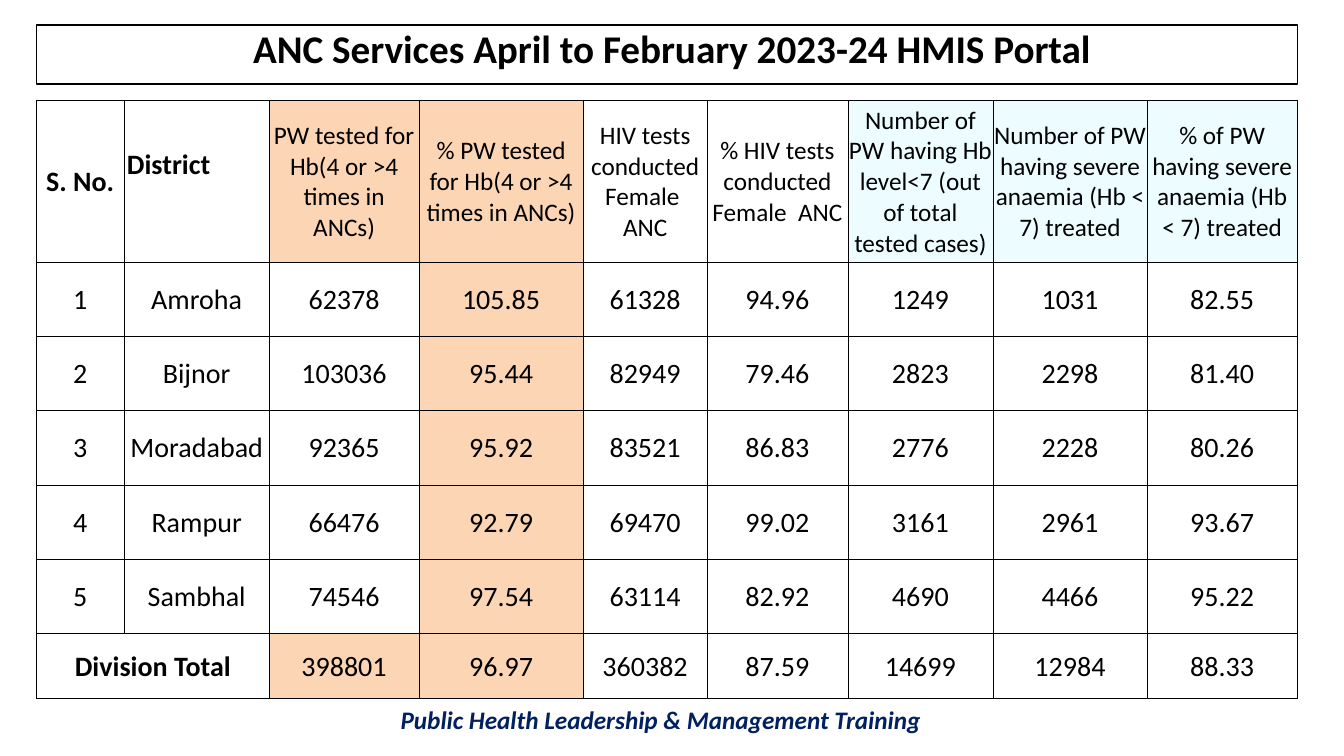
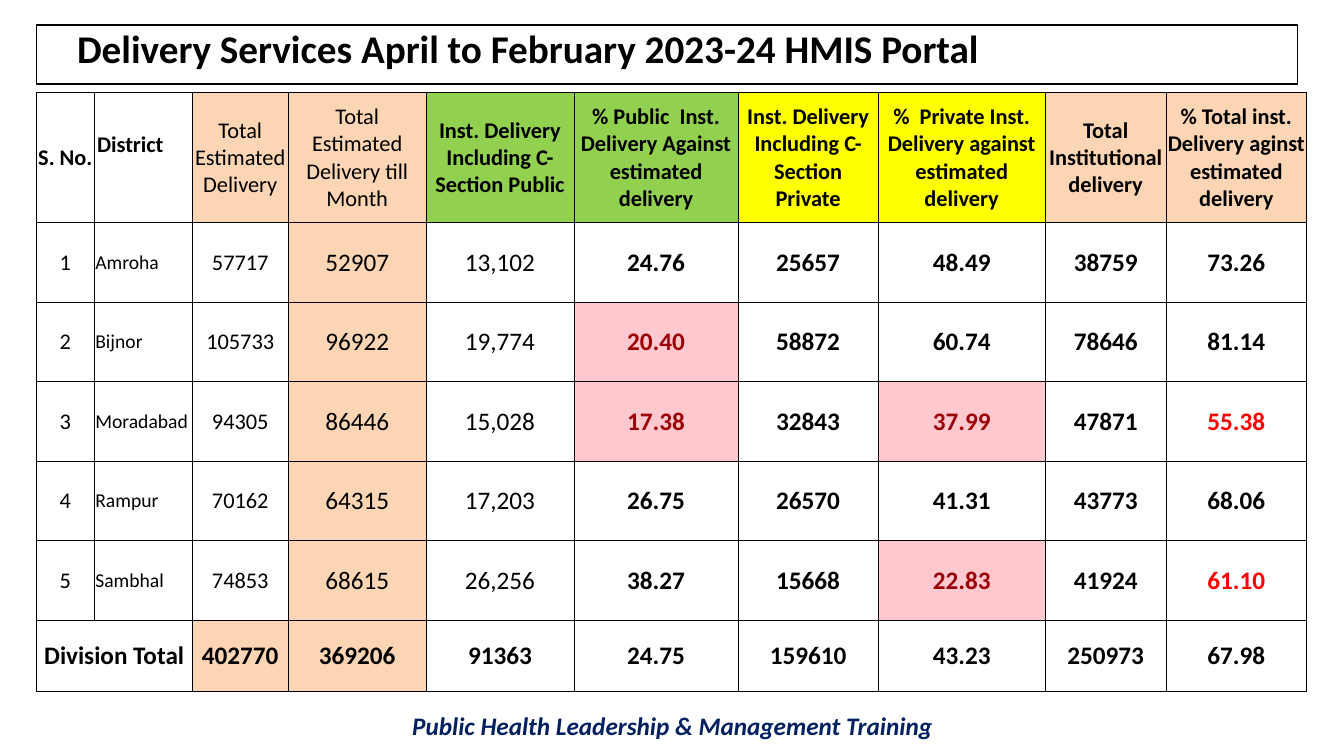
"""Build two district tables of maternal health services."""
from dataclasses import dataclass
from typing import Optional

from lxml.etree import SubElement
from pptx import Presentation
from pptx.dml.color import RGBColor
from pptx.enum.shapes import MSO_SHAPE
from pptx.enum.text import MSO_ANCHOR, PP_ALIGN
from pptx.oxml import parse_xml
from pptx.oxml.ns import nsdecls, qn
from pptx.util import Pt

BLACK = RGBColor(0x00, 0x00, 0x00)
NAVY = RGBColor(0x00, 0x20, 0x60)
PEACH = RGBColor(0xFC, 0xD5, 0xB4)
ICE = RGBColor(0xED, 0xFD, 0xFF)
GREEN = RGBColor(0x92, 0xD0, 0x50)
YELLOW = RGBColor(0xFF, 0xFF, 0x00)
PINK = RGBColor(0xFF, 0xC7, 0xCE)
MAROON = RGBColor(0x9C, 0x00, 0x06)
RED = RGBColor(0xFF, 0x00, 0x00)

FONT = "Calibri"
LEFT = 26
CELL_MARGIN = 0.7
FOOTER = "Public Health Leadership & Management Training"
LOW, LOW_TOTAL = (MAROON, PINK), (RED, None)


@dataclass
class Column:
    """Width and look of one table column."""
    header: str
    width: float
    header_fill: Optional[RGBColor] = None
    header_bold: bool = False
    size: int = 20
    bold: bool = False
    fill: Optional[RGBColor] = None
    total_fill: Optional[RGBColor] = None
    align: PP_ALIGN = PP_ALIGN.CENTER


@dataclass
class Grid:
    """Content and measures of one table."""
    top: float
    header_size: int
    total_size: int
    total_bold: bool
    heights: list
    columns: list
    rows: list
    total: list
    flags: dict


ANC = Grid(
    top=72, header_size=18, total_size=20, total_bold=False,
    heights=[115.2] + [53.1] * 5 + [46.1],
    columns=[
        Column("S. No.", 62.7, header_bold=True),
        Column("District", 103.7, header_bold=True),
        Column("PW tested for Hb(4 or >4 times in ANCs)", 106.9, PEACH,
               total_fill=PEACH),
        Column("% PW tested for Hb(4 or >4 times in ANCs)", 117.4, PEACH,
               fill=PEACH, total_fill=PEACH),
        Column("HIV tests conducted Female  ANC", 88.4),
        Column("% HIV tests conducted Female  ANC", 100.6),
        Column("Number of PW having Hb level<7 (out of total tested cases)",
               103.7, ICE),
        Column("Number of PW having severe anaemia (Hb < 7) treated",
               110.1, ICE),
        Column("% of PW having severe anaemia (Hb < 7) treated", 107.2, ICE),
    ],
    rows=[
        ["1", "Amroha", "62378", "105.85", "61328", "94.96",
         "1249", "1031", "82.55"],
        ["2", "Bijnor", "103036", "95.44", "82949", "79.46",
         "2823", "2298", "81.40"],
        ["3", "Moradabad", "92365", "95.92", "83521", "86.83",
         "2776", "2228", "80.26"],
        ["4", "Rampur", "66476", "92.79", "69470", "99.02",
         "3161", "2961", "93.67"],
        ["5", "Sambhal", "74546", "97.54", "63114", "82.92",
         "4690", "4466", "95.22"],
    ],
    total=["398801", "96.97", "360382", "87.59", "14699", "12984", "88.33"],
    flags={},
)

DELIVERY = Grid(
    top=66, header_size=16, total_size=18, total_bold=True,
    heights=[92.9] + [56.8] * 5 + [51],
    columns=[
        Column("S. No.", 41.4, header_bold=True, size=16),
        Column("District", 69.8, header_bold=True, size=14,
               align=PP_ALIGN.LEFT),
        Column("Total Estimated Delivery", 68.9, PEACH, size=16,
               total_fill=PEACH),
        Column("Total Estimated Delivery till Month", 98.2, PEACH, size=18,
               fill=PEACH, total_fill=PEACH),
        Column("Inst. Delivery Including C-Section Public", 105.8, GREEN,
               True, 18),
        Column("% Public  Inst. Delivery Against estimated delivery", 117.2,
               GREEN, True, 18, True),
        Column("Inst. Delivery Including C-Section Private", 100.1, YELLOW,
               True, 18, True),
        Column("%  Private Inst. Delivery against estimated delivery", 119.3,
               YELLOW, True, 18, True),
        Column("Total Institutional delivery", 86.4, PEACH, True, 18, True),
        Column("% Total inst. Delivery aginst estimated delivery", 100.3,
               PEACH, True, 18, True),
    ],
    rows=[
        ["1", "Amroha", "57717", "52907", "13,102", "24.76",
         "25657", "48.49", "38759", "73.26"],
        ["2", "Bijnor", "105733", "96922", "19,774", "20.40",
         "58872", "60.74", "78646", "81.14"],
        ["3", "Moradabad", "94305", "86446", "15,028", "17.38",
         "32843", "37.99", "47871", "55.38"],
        ["4", "Rampur", "70162", "64315", "17,203", "26.75",
         "26570", "41.31", "43773", "68.06"],
        ["5", "Sambhal", "74853", "68615", "26,256", "38.27",
         "15668", "22.83", "41924", "61.10"],
    ],
    total=["402770", "369206", "91363", "24.75", "159610", "43.23",
           "250973", "67.98"],
    flags={(2, 5): LOW, (3, 5): LOW, (3, 7): LOW, (5, 7): LOW,
           (3, 9): LOW_TOTAL, (5, 9): LOW_TOTAL},
)


def style(p, text, size, color=BLACK, bold=True, align=PP_ALIGN.CENTER):
    """Write text into a paragraph and format it."""
    p.text = text
    p.alignment = align
    p.font.name = FONT
    p.font.size = Pt(size)
    p.font.bold = bold
    p.font.color.rgb = color


def add_text(s, box, text, size, color=BLACK, align=PP_ALIGN.CENTER):
    """Add a vertically centred line of text and return its paragraph."""
    tf = s.shapes.add_textbox(*map(Pt, box)).text_frame
    tf.word_wrap = True
    tf.vertical_anchor = MSO_ANCHOR.MIDDLE
    p = tf.paragraphs[0]
    style(p, text, size, color, align=align)
    return p


def add_title(s, text, align):
    """Add the slide title and its outlined frame."""
    add_text(s, (48, 12, 864, 48), text, 28, align=align).line_spacing = 0.9
    sp = s.shapes.add_shape(MSO_SHAPE.RECTANGLE,
                            Pt(LEFT), Pt(18), Pt(900.7), Pt(42))
    sp.shadow.inherit = False
    sp.fill.background()
    sp.line.color.rgb = BLACK
    sp.line.width = Pt(1)


def add_borders(cell):
    """Draw thin black lines on all four sides of a cell."""
    tc_pr = cell._tc.get_or_add_tcPr()
    for i, side in enumerate(("lnL", "lnR", "lnT", "lnB")):
        ln = parse_xml(f'<a:{side} {nsdecls("a")} w="{Pt(0.5)}"/>')
        fill = SubElement(ln, qn("a:solidFill"))
        SubElement(fill, qn("a:srgbClr"), val=str(BLACK))
        tc_pr.insert(i, ln)


def fill_cell(cell, text, size, bold, fill=None, color=BLACK,
              align=PP_ALIGN.CENTER):
    """Write, colour and outline one table cell."""
    cell.vertical_anchor = MSO_ANCHOR.MIDDLE
    cell.margin_left = cell.margin_top = cell.margin_right = Pt(CELL_MARGIN)
    cell.margin_bottom = Pt(0)
    style(cell.text_frame.paragraphs[0], text, size, color, bold, align)
    if fill is None:
        cell.fill.background()
    else:
        cell.fill.solid()
        cell.fill.fore_color.rgb = fill
    add_borders(cell)


def add_header(table, grid):
    """Fill the header row, with District raised by one line at the left."""
    for c, col in enumerate(grid.columns):
        size = 20 if col.header_bold and grid is ANC else grid.header_size
        fill_cell(table.cell(0, c), col.header, size, col.header_bold,
                  col.header_fill)
    district = table.cell(0, 1)
    district.text_frame.paragraphs[0].alignment = PP_ALIGN.LEFT
    district.margin_left = Pt(2)
    district.margin_bottom = Pt(1.2 * size if grid is DELIVERY else 24)


def add_total(table, grid):
    """Fill the total row, whose label spans the first two columns."""
    last = len(grid.rows) + 1
    label = table.cell(last, 0)
    label.merge(table.cell(last, 1))
    fill_cell(label, "Division Total", grid.total_size, True)
    add_borders(table.cell(last, 1))
    for c, text in enumerate(grid.total, 2):
        fill_cell(table.cell(last, c), text, grid.total_size,
                  grid.total_bold, grid.columns[c].total_fill)


def add_grid(s, grid):
    """Add a district table with header and total rows."""
    widths = [col.width for col in grid.columns]
    table = s.shapes.add_table(
        len(grid.heights), len(widths), Pt(LEFT), Pt(grid.top),
        Pt(sum(widths)), Pt(sum(grid.heights))).table
    table.first_row = table.horz_banding = False
    for column, width in zip(table.columns, widths):
        column.width = Pt(width)
    for row, height in zip(table.rows, grid.heights):
        row.height = Pt(height)
    add_header(table, grid)
    for r, row in enumerate(grid.rows, 1):
        for c, (text, col) in enumerate(zip(row, grid.columns)):
            color, fill = grid.flags.get((r, c), (BLACK, col.fill))
            fill_cell(table.cell(r, c), text, col.size, col.bold, fill,
                      color, col.align)
    add_total(table, grid)


def add_slide(prs, title, align, grid, footer_box):
    """Add one slide with title, table and footer."""
    s = prs.slides.add_slide(prs.slide_layouts[6])
    add_title(s, title, align)
    add_grid(s, grid)
    add_text(s, footer_box, FOOTER, 18, NAVY).font.italic = True


def main():
    """Build and save the presentation."""
    prs = Presentation()
    prs.slide_width, prs.slide_height = Pt(960), Pt(540)
    add_slide(prs, "ANC Services April to February 2023-24 HMIS Portal",
              PP_ALIGN.CENTER, ANC, (40, 498.5, 864, 31))
    add_slide(prs, "Delivery Services April to February 2023-24 HMIS Portal",
              PP_ALIGN.LEFT, DELIVERY, (LEFT, 505, 908.6, 27))
    prs.save("out.pptx")


if __name__ == "__main__":
    main()
